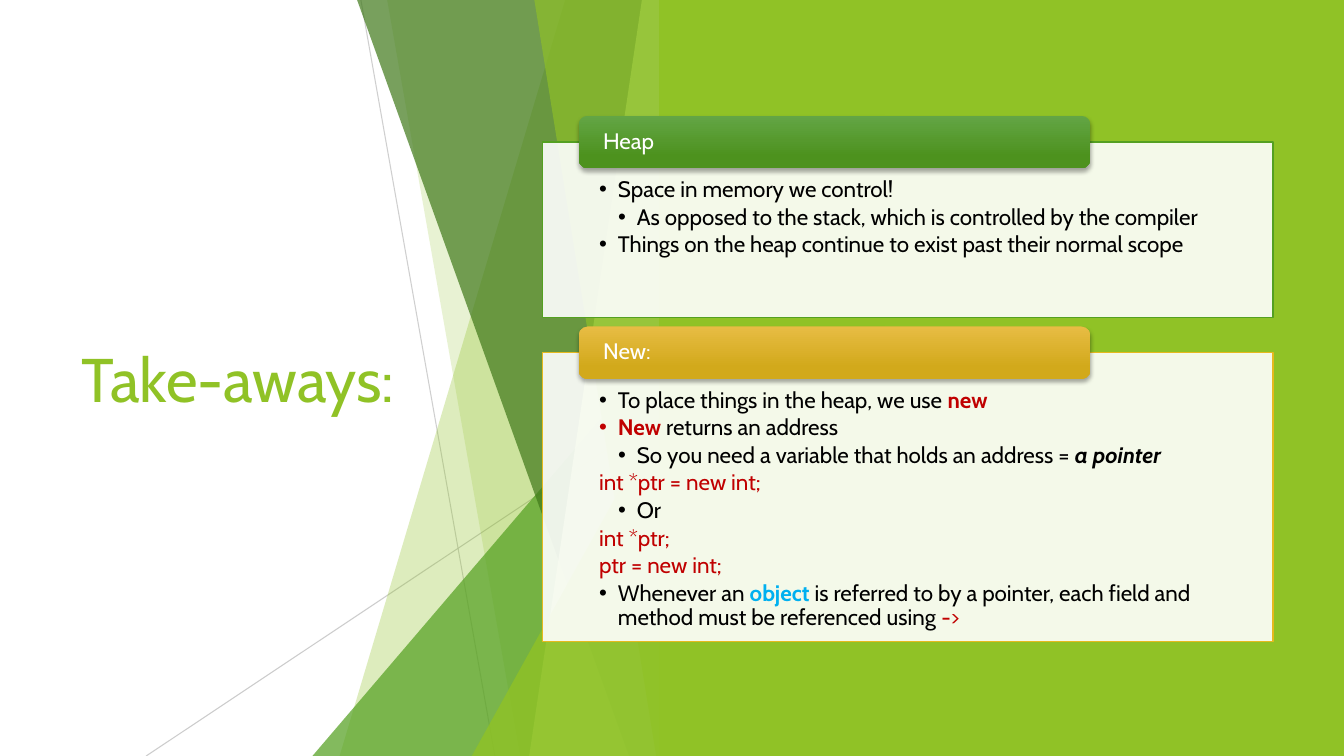
from lxml.etree import SubElement
from pptx import Presentation
from pptx.dml.color import RGBColor
from pptx.enum.shapes import MSO_CONNECTOR, MSO_SHAPE
from pptx.enum.text import MSO_ANCHOR
from pptx.oxml.ns import qn
from pptx.util import Pt


def rgb(code):
    return RGBColor.from_string(code)


def fade(shape, pct):
    """Set the opacity of the first colour in a shape."""
    color = next(shape.element.spPr.iter(qn("a:srgbClr")))
    SubElement(color, qn("a:alpha"), val=str(pct * 1000))


GREEN, RED, BLUE = "90C226", "C00000", "00B0F0"
BLACK, WHITE = "000000", "FFFFFF"
FONT = "Cabin"

deck = Presentation()
deck.slide_width, deck.slide_height = Pt(960), Pt(540)
slide = deck.slides.add_slide(deck.slide_layouts[6])
shapes = slide.shapes

# Title
title = shapes.add_textbox(Pt(51), Pt(108.7), Pt(279.4), Pt(322.6))
frame = title.text_frame
frame.word_wrap = True
frame.vertical_anchor = MSO_ANCHOR.MIDDLE
run = frame.paragraphs[0].add_run()
run.text = "Take-aways:"
for key, val in {"name": FONT, "size": Pt(44)}.items():
    setattr(run.font, key, val)
run.font.color.rgb = rgb(GREEN)

# Thin lines behind the bands
for x1, y1, x2, pct in [(257.8, 0, 353.5, 75), (479.5, 290.2, 104.4, 80)]:
    line = shapes.add_connector(
        MSO_CONNECTOR.STRAIGHT, Pt(x1), Pt(y1), Pt(x2), Pt(540))
    line.line.width = Pt(0.75)
    line.line.color.rgb = rgb("BFBFBF")
    fade(line, pct)
    SubElement(line.element.spPr, qn("a:effectLst"))

# Bands: a quad has its left edge at top and foot,
# a triangle has its left corner and its peak height
EDGE, TOP, FOOT = 479.8, -0.6, 540
for kind, a, b, color, pct in [
    ("quad", 403.9, 242.6, GREEN, 30),
    ("quad", 276.5, 371.5, GREEN, 20),
    ("tri", 223.2, 239.8, "54A021", 72),
    ("quad", 254.9, 449.3, "3F7819", 70),
    ("quad", 458.6, 378, "C0E474", 70),
    ("quad", 381.6, 468.7, GREEN, 65),
    ("tri", 337, 283, GREEN, 80),
]:
    if kind == "quad":
        path = shapes.build_freeform(Pt(a), Pt(TOP))
        path.add_line_segments(
            [(Pt(EDGE), Pt(TOP)), (Pt(EDGE), Pt(FOOT)), (Pt(b), Pt(FOOT))])
        band = path.convert_to_shape()
    else:
        band = shapes.add_shape(
            MSO_SHAPE.ISOSCELES_TRIANGLE, Pt(a), Pt(b), Pt(EDGE - a), Pt(FOOT - b))
        band.adjustments[0] = 1
    band.fill.solid()
    band.fill.fore_color.rgb = rgb(color)
    fade(band, pct)
    band.line.fill.background()
    band.shadow.inherit = False

# Green field on the right
field = shapes.add_shape(MSO_SHAPE.RECTANGLE, Pt(470.9), 0, Pt(489.1), Pt(540))
field.fill.solid()
field.fill.fore_color.rgb = rgb(GREEN)
field.line.fill.background()
field.shadow.inherit = False

# Cards: label, top, height, edge, tab colours, and rows of
# (level, bullet, runs), where a run is (text, colour, format)
BOLD = {"bold": True}
CARDS = [
    ("Heap", 101.4, 125.3, "54A021", ("63A545", "4D921E"), [
        (0, True, [("Space in memory we control!", BLACK, {})]),
        (1, True, [("As opposed to the stack, which is controlled by the compiler",
                    BLACK, {})]),
        (0, True, [("Things on the heap continue to exist past their normal scope",
                    BLACK, {})]),
    ]),
    ("New:", 251.9, 206.3, "E6B91E", ("E7BC43", "D2A91B"), [
        (0, True, [("To place things in the heap, we use ", BLACK, {}),
                   ("new", RED, BOLD)]),
        (0, True, [("New ", RED, BOLD), ("returns an address", BLACK, {})]),
        (1, True, [("So you need a variable that holds an address = ", BLACK, {}),
                   ("a pointer", BLACK, {"bold": True, "italic": True})]),
        (0, False, [("int *ptr = new int;", RED, {})]),
        (1, True, [("Or", BLACK, {})]),
        (0, False, [("int *ptr;", RED, {})]),
        (0, False, [("ptr = new int;", RED, {})]),
        (0, True, [("Whenever an ", BLACK, {}), ("object", BLUE, BOLD),
                   (" is referred to by a pointer, each field and method "
                    "must be referenced using ", BLACK, {}),
                   ("->", RED, {})]),
    ]),
]
INDENT = 13.5
BODY = {"word_wrap": True, "vertical_anchor": MSO_ANCHOR.TOP,
        "margin_left": Pt(40.5), "margin_right": Pt(40.5),
        "margin_top": Pt(26), "margin_bottom": Pt(9)}
LABEL = {"word_wrap": True, "vertical_anchor": MSO_ANCHOR.MIDDLE,
         "margin_left": Pt(15.5), "margin_right": Pt(15.5),
         "margin_top": 0, "margin_bottom": 0}

for label, top, high, edge, shades, rows in CARDS:
    # Panel with its text
    panel = shapes.add_shape(
        MSO_SHAPE.RECTANGLE, Pt(387.4), Pt(top), Pt(522), Pt(high))
    panel.fill.solid()
    panel.fill.fore_color.rgb = rgb(WHITE)
    fade(panel, 90)
    panel.line.color.rgb = rgb(edge)
    panel.line.width = Pt(1)
    panel.shadow.inherit = False

    # Tab across the panel's top edge
    tab = shapes.add_shape(
        MSO_SHAPE.ROUNDED_RECTANGLE, Pt(413.5), Pt(top - 18.7), Pt(365.2), Pt(37.4))
    tab.fill.gradient()
    tab.fill.gradient_angle = 270
    for stop, place, shade in zip(tab.fill.gradient_stops, (0, 0.78), shades):
        stop.position = place
        stop.color.rgb = rgb(shade)
    tab.line.fill.background()
    tab.shadow.inherit = False
    cast = SubElement(
        tab.element.spPr.find(qn("a:effectLst")), qn("a:outerShdw"),
        blurRad=str(Pt(3)), dist=str(Pt(2)), dir="5400000", rotWithShape="0")
    tone = SubElement(cast, qn("a:srgbClr"), val=BLACK)
    SubElement(tone, qn("a:alpha"), val="35000")

    # Text of both parts
    head = [(0, False, [(label, WHITE, {})])]
    for shape, form, lines, after in [(panel, BODY, rows, 2.4), (tab, LABEL, head, 0)]:
        frame = shape.text_frame
        for key, val in form.items():
            setattr(frame, key, val)
        for num, (level, mark, runs) in enumerate(lines):
            para = frame.add_paragraph() if num else frame.paragraphs[0]
            para.level = level
            para.line_spacing = 0.9
            para.space_after = Pt(after)
            props = para._p.get_or_add_pPr()
            props.set("algn", "l")
            if shape is panel:
                props.set("marL", str(Pt(INDENT * (level + 1))))
                props.set("indent", str(Pt(-INDENT)))
            if mark:
                SubElement(props, qn("a:buFont"), typeface="Arial")
                SubElement(props, qn("a:buChar"), char="•")
            for text, color, style in runs:
                run = para.add_run()
                run.text = text
                for key, val in {"name": FONT, "size": Pt(16), **style}.items():
                    setattr(run.font, key, val)
                run.font.color.rgb = rgb(color)

deck.save("out.pptx")
